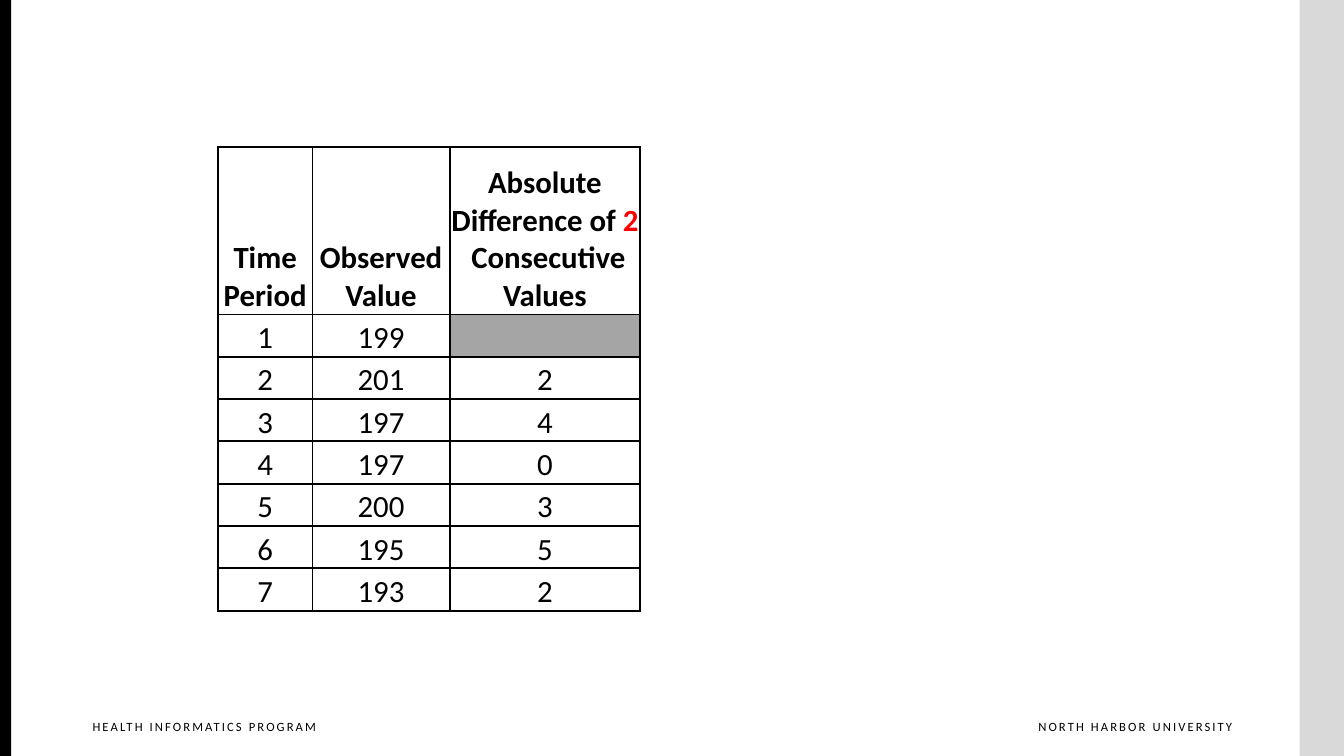
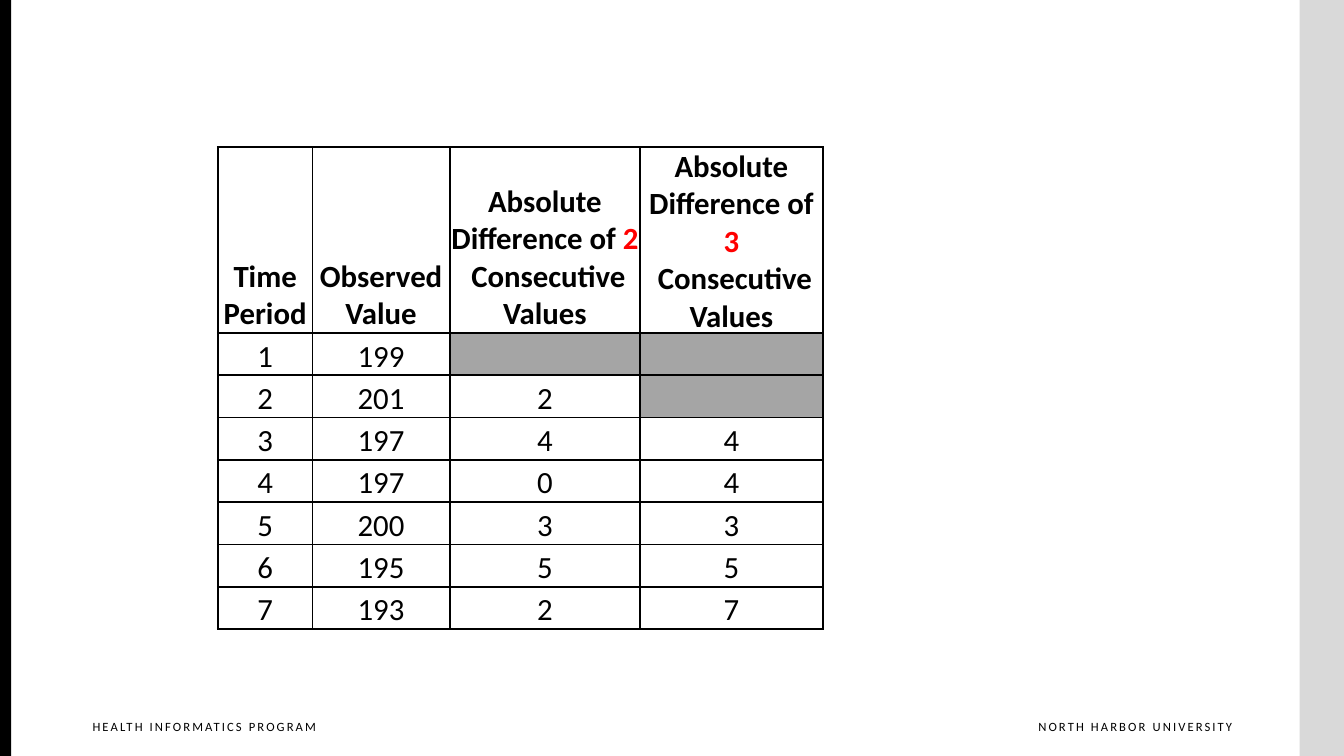
from dataclasses import dataclass

from lxml import etree
from pptx import Presentation
from pptx import util as u
from pptx.dml.color import RGBColor
from pptx.enum import shapes, text
from pptx.oxml.ns import qn


@dataclass(frozen=True)
class Theme:
    font: str = "Calibri"
    ink: str = "000000"
    paper: str = "FFFFFF"
    accent: str = "FF0000"
    band: str = "D9D9D9"
    blank: str = "A5A5A5"
    table_size: int = 22
    footer_size: int = 9
    footer_spacing: float = 1.5
    border: float = 1.5


T = Theme()
WIDTH, HEIGHT = 13.33, 7.5
OBSERVED = [199, 201, 197, 197, 200, 195, 193]
TABLE_LEFT, TABLE_TOP = 2.16, 1.46
COL_WIDTHS = [0.94, 1.36, 1.89, 1.81]
HEADER_HEIGHT, ROW_HEIGHT = 1.66, 0.42


def add_run(p, words, size=T.table_size, color=T.ink, bold=False, spacing=0):
    r = p.add_run()
    r.text = words
    r.font.name, r.font.size, r.font.bold = T.font, u.Pt(size), bold
    r.font.color.rgb = RGBColor.from_string(color)
    if spacing:
        r.font._element.set("spc", str(int(spacing * 100)))


def add_band(s, left, width, color):
    sp = s.shapes.add_shape(shapes.MSO_SHAPE.RECTANGLE, u.Inches(left), 0,
                            u.Inches(width), u.Inches(HEIGHT))
    sp.shadow.inherit = False
    sp.fill.solid()
    sp.fill.fore_color.rgb = RGBColor.from_string(color)
    sp.line.fill.background()


def add_footer(s, words, left, width, align):
    sp = s.shapes.add_textbox(u.Inches(left), u.Inches(7.08),
                              u.Inches(width), u.Inches(0.33))
    tf = sp.text_frame
    tf.word_wrap = True
    tf.margin_right = 0
    tf.paragraphs[0].alignment = align
    add_run(tf.paragraphs[0], words, size=T.footer_size,
            spacing=T.footer_spacing)


def add_frame(prs):
    """Add a blank slide with the bands and footers that all slides share."""
    s = prs.slides.add_slide(prs.slide_layouts[6])
    add_band(s, 12.89, 0.44, T.band)
    add_band(s, 0, 0.11, T.ink)
    add_footer(s, "NORTH HARBOR UNIVERSITY", 9.87, 2.35, text.PP_ALIGN.RIGHT)
    add_footer(s, "HEALTH INFORMATICS PROGRAM", 0.82, 2.54, text.PP_ALIGN.LEFT)
    return s


def set_borders(cell):
    tc_pr = cell._tc.get_or_add_tcPr()
    for i, side in enumerate(("a:lnL", "a:lnR", "a:lnT", "a:lnB")):
        ln = etree.Element(qn(side), w=str(int(u.Pt(T.border))))
        fill = etree.SubElement(ln, qn("a:solidFill"))
        etree.SubElement(fill, qn("a:srgbClr"), val=T.ink)
        tc_pr.insert(i, ln)


def fill_cell(cell, paragraphs, bold=False):
    """Write paragraphs of (words, colour) runs; no paragraphs greys the cell."""
    cell.margin_left = cell.margin_right = cell.margin_top = u.Inches(0.01)
    cell.margin_bottom = 0
    cell.vertical_anchor = text.MSO_ANCHOR.BOTTOM
    cell.fill.solid()
    cell.fill.fore_color.rgb = RGBColor.from_string(
        T.paper if paragraphs else T.blank)
    set_borders(cell)
    tf = cell.text_frame
    for i, runs in enumerate(paragraphs):
        p = tf.add_paragraph() if i else tf.paragraphs[0]
        p.alignment = text.PP_ALIGN.CENTER
        for words, color in runs:
            add_run(p, words, color=color, bold=bold)


def difference_header(window):
    return [[("Absolute Difference of ", T.ink), (str(window), T.accent)],
            [(" Consecutive Values", T.ink)]]


def difference(row, window):
    """Spread of the last `window` values, or None while too few are known."""
    if row + 1 < window:
        return None
    values = OBSERVED[row + 1 - window:row + 1]
    return max(values) - min(values)


def add_difference_table(s, windows):
    widths = COL_WIDTHS[:2 + len(windows)]
    headers = [[[("Time Period", T.ink)]], [[("Observed Value", T.ink)]]]
    headers += [difference_header(w) for w in windows]
    body = [[i + 1, value] + [difference(i, w) for w in windows]
            for i, value in enumerate(OBSERVED)]
    heights = [HEADER_HEIGHT] + [ROW_HEIGHT] * len(body)

    table = s.shapes.add_table(
        len(heights), len(widths), u.Inches(TABLE_LEFT), u.Inches(TABLE_TOP),
        u.Inches(sum(widths)), u.Inches(sum(heights))).table
    table.first_row = table.horz_banding = False
    for column, width in zip(table.columns, widths):
        column.width = u.Inches(width)
    for row, height in zip(table.rows, heights):
        row.height = u.Inches(height)

    for c, header in enumerate(headers):
        fill_cell(table.cell(0, c), header, bold=True)
    for r, values in enumerate(body, start=1):
        for c, value in enumerate(values):
            words = [] if value is None else [[(str(value), T.ink)]]
            fill_cell(table.cell(r, c), words)


def main():
    prs = Presentation()
    prs.slide_width, prs.slide_height = u.Inches(WIDTH), u.Inches(HEIGHT)
    # One slide per set of difference windows
    for windows in ([2], [2, 3]):
        add_difference_table(add_frame(prs), windows)
    prs.save("out.pptx")


if __name__ == "__main__":
    main()
